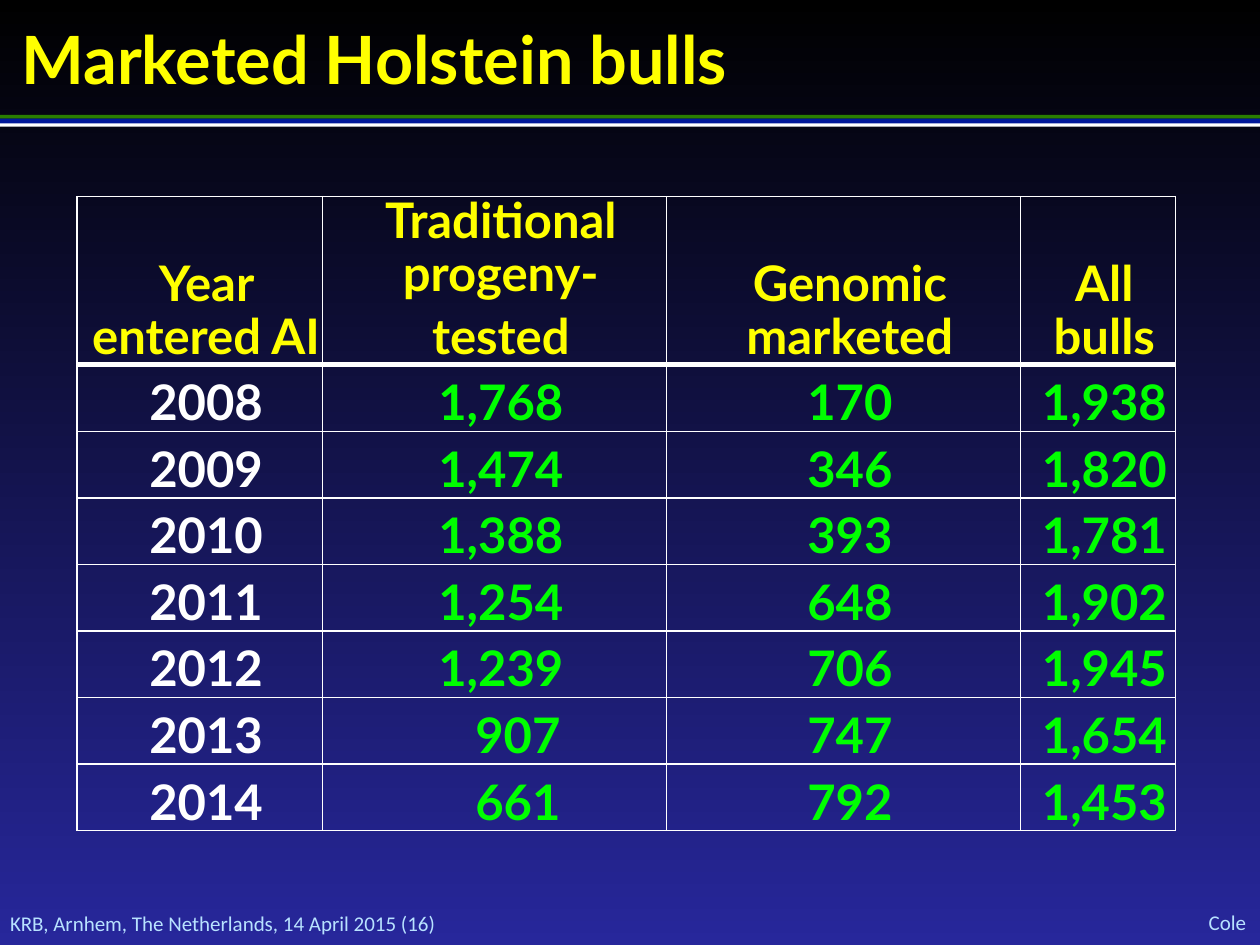
from lxml.etree import SubElement
from pptx import Presentation
from pptx.dml.color import RGBColor as RGB
from pptx.enum.shapes import MSO_SHAPE as Shape
from pptx.enum.text import MSO_ANCHOR as Anchor, PP_ALIGN as Align
from pptx.oxml.ns import qn
from pptx.util import Inches, Pt

BLACK = RGB(0x00, 0x00, 0x00)
NAVY = RGB(0x27, 0x27, 0x9B)
WHITE = RGB(0xFF, 0xFF, 0xFF)
YELLOW = RGB(0xFF, 0xFF, 0x00)
LIME = RGB(0x00, 0xFF, 0x00)
GREEN = RGB(0x2A, 0x7E, 0x00)
BLUE = RGB(0x00, 0x17, 0x99)
PALE = RGB(0xB8, 0xE2, 0xFF)

HEADS = ["Year entered AI", "Traditional progeny-\ntested", "Genomic marketed", "All bulls"]
BULLS = [
    ("2008", "1,768", "170", "1,938"),
    ("2009", "1,474", "346", "1,820"),
    ("2010", "1,388", "393", "1,781"),
    ("2011", "1,254", "648", "1,902"),
    ("2012", "1,239", "706", "1,945"),
    ("2013", "907", "747", "1,654"),
    ("2014", "661", "792", "1,453"),
]


class Deck:
    wide, high = 10, 7.5
    main, small = "Lato", "Calibri"

    def __init__(self):
        self.prs = Presentation()
        self.prs.slide_width = Inches(self.wide)
        self.prs.slide_height = Inches(self.high)
        self.slide = self.prs.slides.add_slide(self.prs.slide_layouts[6])

    def area(self, x, y, w, h):
        return [Inches(v * s) for v, s in zip((x, y, w, h), (self.wide, self.high) * 2)]

    def back(self, top, base):
        fill = self.slide.background.fill
        fill.gradient()
        fill.gradient_angle = 270
        for stop, (color, place) in zip(fill.gradient_stops, ((top, 0), (base, 1))):
            stop.color.rgb = color
            stop.position = place

    def style(self, para, size, color, face, bold, align):
        para.alignment = align
        font = para.font
        font.size, font.name, font.bold = Pt(size), face, bold
        font.color.rgb = color

    def text(self, words, box, size, color, face, bold=False, align=Align.LEFT, anchor=Anchor.MIDDLE):
        frame = self.slide.shapes.add_textbox(*self.area(*box)).text_frame
        frame.margin_left = frame.margin_right = frame.margin_top = frame.margin_bottom = 0
        frame.word_wrap = True
        frame.vertical_anchor = anchor
        frame.text = words
        self.style(frame.paragraphs[0], size, color, face, bold, align)

    def band(self, y, h, color):
        bar = self.slide.shapes.add_shape(Shape.RECTANGLE, *self.area(0, y, 1, h))
        bar.shadow.inherit = False
        bar.fill.solid()
        bar.fill.fore_color.rgb = color
        bar.line.fill.background()

    def edges(self, cell, top, base):
        props = cell._tc.get_or_add_tcPr()
        for side, width in (("L", 1), ("R", 1), ("T", top), ("B", base)):
            line = SubElement(props, qn(f"a:ln{side}"), w=str(Pt(width)))
            fill = SubElement(line, qn("a:solidFill"))
            SubElement(fill, qn("a:srgbClr"), val=str(WHITE))
        cell.fill.background()

    def cell(self, cell, words, color, lead, after, inset, anchor):
        cell.margin_left = Inches(inset)
        cell.margin_right = cell.margin_top = cell.margin_bottom = 0
        cell.vertical_anchor = anchor
        cell.text = words
        for para in cell.text_frame.paragraphs:
            para.line_spacing, para.space_after = Pt(lead), Pt(after)
            self.style(para, 28, color, self.main, True, Align.CENTER)

    def table(self, heads, rows, box, cols, tall):
        shape = self.slide.shapes.add_table(len(rows) + 1, len(heads), *self.area(*box))
        grid = shape.table
        grid.first_row = grid.horz_banding = False
        for col, width in zip(grid.columns, cols):
            col.width = Inches(width * self.wide)
        for r, row in enumerate([heads, *rows]):
            grid.rows[r].height = Inches((tall[0] if r == 0 else tall[1]) * self.high)
            for c, words in enumerate(row):
                cell = grid.cell(r, c)
                self.edges(cell, 3 if r == 1 else 1, 3 if r == 0 else 1)
                if r == 0:
                    self.cell(cell, words, YELLOW, 30, 6, 0.1, Anchor.BOTTOM)
                else:
                    inset = 0.37 if c == 1 and len(words) == 3 else 0.1
                    self.cell(cell, words, LIME if c else WHITE, 38, 0, inset, Anchor.TOP)


def main():
    deck = Deck()
    deck.back(BLACK, NAVY)
    deck.text("KRB, Arnhem, The Netherlands, 14 April 2015 (16)",
              (0.008, 0.963, 0.85, 0.027), 12, PALE, deck.small)
    deck.text("Cole", (0.877, 0.962, 0.112, 0.028), 12, PALE, deck.small, align=Align.RIGHT)
    deck.band(0.1215, 0.004, GREEN)
    deck.band(0.13, 0.004, WHITE)
    deck.band(0.1255, 0.005, BLUE)
    deck.text("Marketed Holstein bulls", (0.017, 0.019, 0.9, 0.085), 38, YELLOW,
              deck.main, True, anchor=Anchor.TOP)
    deck.table(HEADS, BULLS, (0.061, 0.208, 0.872, 0.67),
               (0.195, 0.273, 0.281, 0.123), (0.178, 0.0704))
    deck.prs.save("out.pptx")


if __name__ == "__main__":
    main()
